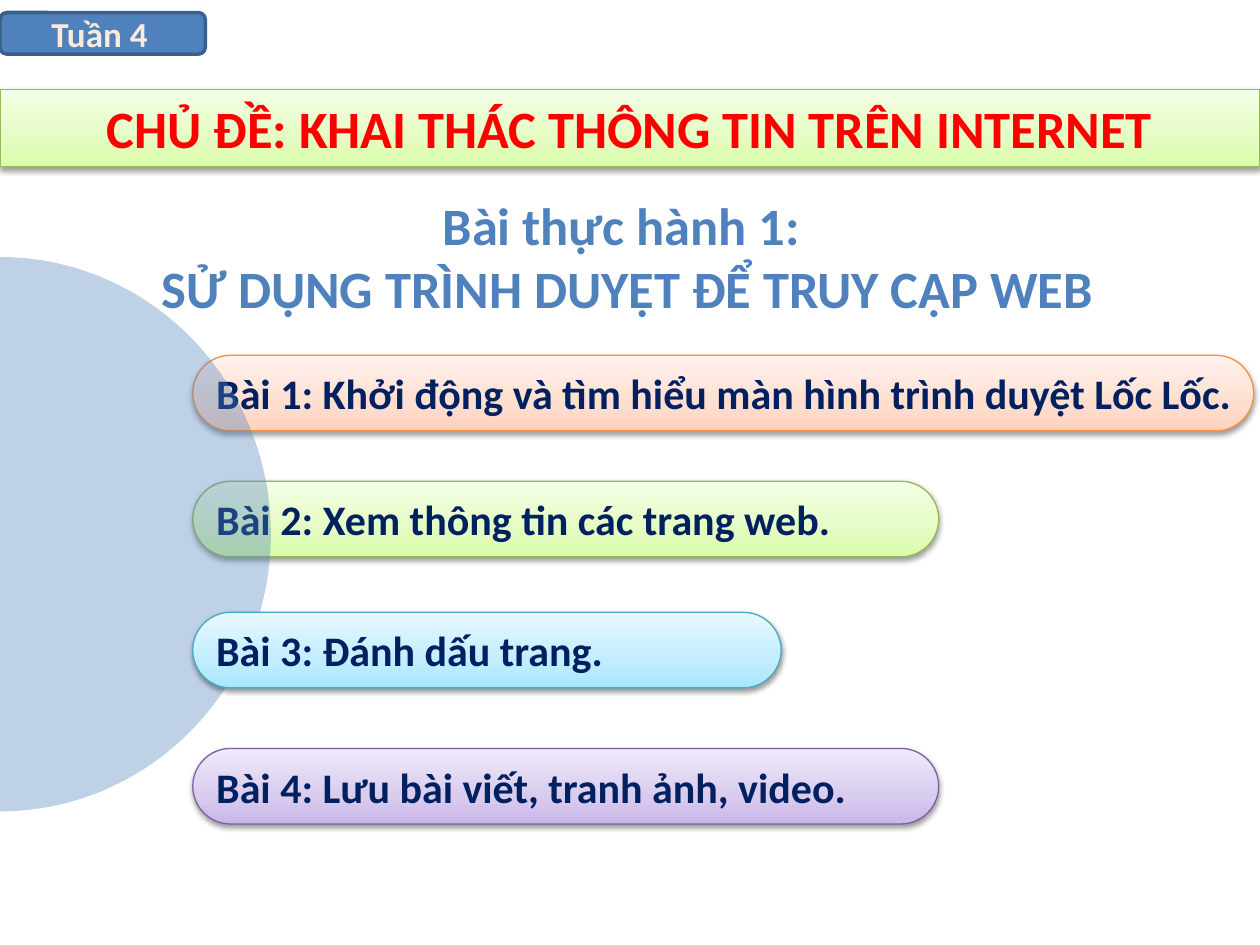
import math
from dataclasses import dataclass

from lxml import etree
from pptx import Presentation
from pptx.dml.color import RGBColor
from pptx.enum.shapes import MSO_SHAPE
from pptx.enum.text import MSO_ANCHOR, MSO_AUTO_SIZE, PP_ALIGN
from pptx.oxml.ns import qn
from pptx.util import Inches, Pt

ROUNDED, RECTANGLE = MSO_SHAPE.ROUNDED_RECTANGLE, MSO_SHAPE.RECTANGLE
LEFT, CENTER = PP_ALIGN.LEFT, PP_ALIGN.CENTER
TOP, MIDDLE = MSO_ANCHOR.TOP, MSO_ANCHOR.MIDDLE
TITLE_ONLY = 5
BLUE, NAVY, RED, CREAM = "4F81BD", "002060", "FF0000", "FDEADA"


@dataclass(frozen=True)
class Palette:
    """Gradient colours from bottom to top, and the outline."""
    stops: tuple[str, str, str]
    outline: str


@dataclass(frozen=True)
class Lesson:
    text: str
    top: float
    width: float
    palette: Palette


ORANGE = Palette(("FFD2BD", "FFDED0", "FFF2ED"), "F69240")
GREEN = Palette(("DAFDA7", "E4FCC2", "F5FFE7"), "98B955")
AQUA = Palette(("A7E6FF", "C1EDFF", "E7F8FF"), "46AAC5")
PURPLE = Palette(("C9B5E8", "D8CBEE", "F0EAF9"), "7D60A0")

# Lessons above the half disc come after those beneath it
LESSONS_BEHIND = [
    Lesson("Bài 2: Xem thông tin các trang web.", 3.82, 5.92, GREEN),
    Lesson("Bài 1: Khởi động và tìm hiểu màn hình trình duyệt Lốc Lốc.",
           2.82, 8.42, ORANGE),
]
LESSONS_IN_FRONT = [
    Lesson("Bài 4: Lưu bài viết, tranh ảnh, video.", 5.94, 5.92, PURPLE),
    Lesson("Bài 3: Đánh dấu trang.", 4.86, 4.67, AQUA),
]


def rgb(value: str) -> RGBColor:
    return RGBColor.from_string(value)


def add_color(parent, value: str, alpha: int = 100) -> None:
    color = etree.SubElement(parent, qn("a:srgbClr"), val=value)
    if alpha < 100:
        etree.SubElement(color, qn("a:alpha"), val=str(alpha * 1000))


def write(frame, lines: list[str], size: float, color: str,
          align=LEFT, anchor=TOP, wrap: bool = True, before: float = 0) -> None:
    frame.auto_size = MSO_AUTO_SIZE.NONE
    frame.word_wrap = wrap
    frame.vertical_anchor = anchor
    for index, line in enumerate(lines):
        paragraph = frame.add_paragraph() if index else frame.paragraphs[0]
        paragraph.alignment = align
        paragraph.space_before = Pt(before)
        run = paragraph.add_run()
        run.text = line
        run.font.name, run.font.size, run.font.bold = "Calibri", Pt(size), True
        run.font.color.rgb = rgb(color)


def add_panel(slide, kind, left: float, top: float, width: float,
              height: float, palette: Palette):
    """Add a shape with a three-stop gradient and a soft shadow below."""
    panel = slide.shapes.add_shape(kind, Inches(left), Inches(top),
                                   Inches(width), Inches(height))
    panel.fill.gradient()
    panel.fill.gradient_angle = 90
    panel.line.color.rgb = rgb(palette.outline)
    panel.line.width = Pt(0.75)
    panel.shadow.inherit = False

    properties = panel.element.spPr
    stop_list = properties.find(".//" + qn("a:gsLst"))
    for stop in list(stop_list):
        stop_list.remove(stop)
    for position, color in zip((0, 35, 100), palette.stops):
        stop = etree.SubElement(stop_list, qn("a:gs"), pos=str(position * 1000))
        add_color(stop, color)

    shadow = etree.SubElement(
        properties.find(qn("a:effectLst")), qn("a:outerShdw"),
        blurRad=str(Pt(3.1)), dist=str(Pt(1.6)), dir="5400000", rotWithShape="0")
    add_color(shadow, "000000", 38)
    return panel


def add_lesson(slide, lesson: Lesson) -> None:
    bar = add_panel(slide, ROUNDED, 1.53, lesson.top, lesson.width, 0.6,
                    lesson.palette)
    bar.adjustments[0] = 0.5
    write(bar.text_frame, [lesson.text], 24, NAVY, anchor=MIDDLE, wrap=False,
          before=4.8)


def add_half_disc(slide, center_y: float, radius_x: float, radius_y: float,
                  steps: int = 90) -> None:
    angles = [math.pi * (step / steps - 0.5) for step in range(steps + 1)]
    points = [(Inches(radius_x * math.cos(angle)),
               Inches(center_y + radius_y * math.sin(angle))) for angle in angles]
    builder = slide.shapes.build_freeform(*points[0])
    builder.add_line_segments(points[1:], close=True)
    disc = builder.convert_to_shape()
    disc.fill.solid()
    disc.fill.fore_color.rgb = rgb(BLUE)
    color = disc.element.spPr.find(qn("a:solidFill"))[0]
    etree.SubElement(color, qn("a:alpha"), val="36000")
    disc.line.fill.background()
    disc.shadow.inherit = False


def add_week_tag(slide) -> None:
    group = slide.shapes.add_group_shape()
    tag = group.shapes.add_shape(ROUNDED, Inches(0), Inches(0.1),
                                 Inches(1.63), Inches(0.33))
    tag.fill.solid()
    tag.fill.fore_color.rgb = rgb(BLUE)
    tag.line.color.rgb = rgb("3A5F8C")
    tag.line.width = Pt(2)
    tag.shadow.inherit = False
    week = group.shapes.add_textbox(Inches(0.31), Inches(0.05),
                                    Inches(9.1), Inches(0.44))
    write(week.text_frame, ["Tuần 4"], 20, CREAM)


def main() -> None:
    deck = Presentation()
    deck.slide_width, deck.slide_height = Inches(10), Inches(7.5)
    slide = deck.slides.add_slide(deck.slide_layouts[TITLE_ONLY])

    # Practice title
    title = slide.shapes.title
    title.left, title.top = Inches(-0.02), Inches(1.48)
    title.width, title.height = Inches(10), Inches(1.11)
    write(title.text_frame,
          ["Bài thực hành 1: ", "SỬ DỤNG TRÌNH DUYỆT ĐỂ TRUY CẬP WEB"],
          30, BLUE, CENTER)

    # Lessons around the half disc
    for lesson in LESSONS_BEHIND:
        add_lesson(slide, lesson)
    add_half_disc(slide, 4.24, 2.15, 2.2)
    for lesson in LESSONS_IN_FRONT:
        add_lesson(slide, lesson)

    # Week tag and topic banner
    add_week_tag(slide)
    banner = add_panel(slide, RECTANGLE, 0, 0.71, 10, 0.61, GREEN)
    write(banner.text_frame, ["CHỦ ĐỀ: KHAI THÁC THÔNG TIN TRÊN INTERNET"],
          30, RED, CENTER)

    deck.save("out.pptx")


if __name__ == "__main__":
    main()
